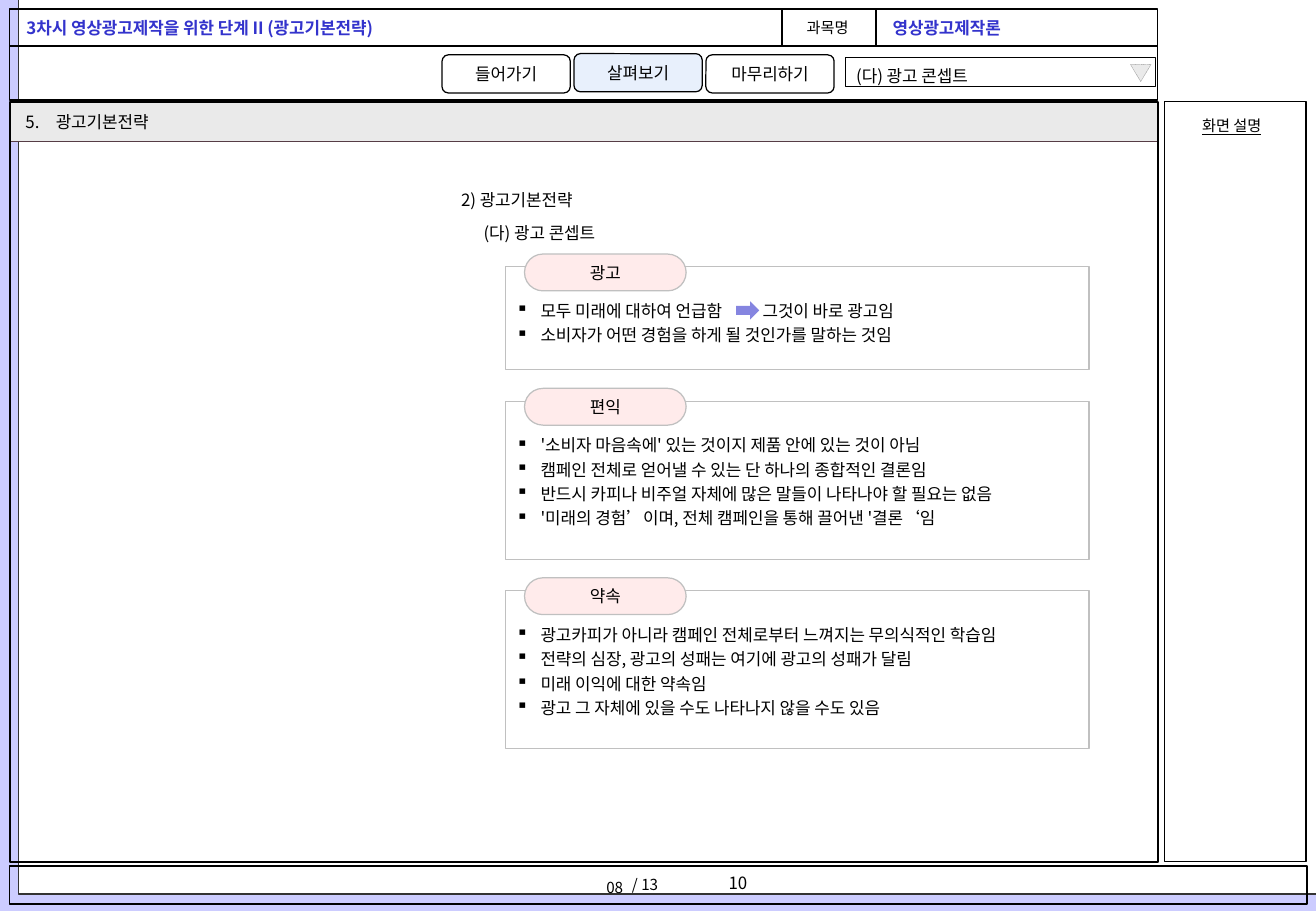
from dataclasses import dataclass

from lxml import etree
from pptx import Presentation
from pptx.dml.color import RGBColor
from pptx.enum.dml import MSO_LINE
from pptx.enum.shapes import MSO_SHAPE
from pptx.enum.text import MSO_ANCHOR, PP_ALIGN
from pptx.oxml.ns import qn
from pptx.util import Pt

RECTANGLE = MSO_SHAPE.RECTANGLE
ROUNDED = MSO_SHAPE.ROUNDED_RECTANGLE
TRIANGLE = MSO_SHAPE.ISOSCELES_TRIANGLE
RIGHT_ARROW = MSO_SHAPE.RIGHT_ARROW
LEFT, CENTER, RIGHT = PP_ALIGN.LEFT, PP_ALIGN.CENTER, PP_ALIGN.RIGHT
TOP, MIDDLE = MSO_ANCHOR.TOP, MSO_ANCHOR.MIDDLE
DOTTED = MSO_LINE.ROUND_DOT


@dataclass(frozen=True)
class Theme:
    font: str = "Noto Sans CJK KR"
    body: float = 10
    small: float = 9
    black: str = "000000"
    white: str = "FFFFFF"
    title: str = "3333CC"
    backdrop: str = "CCCCFF"
    page_edge: str = "333333"
    strip: str = "EAEAEA"
    strip_edge: str = "563C45"
    marker_edge: str = "969696"
    active: str = "E8F0FC"
    card_edge: str = "C0C0C0"
    card_label: str = "FFEBEB"
    arrow: str = "8585E0"


THEME = Theme()
TOPIC = "(다) 광고 콘셉트"
CARD_LEFT, CARD_WIDTH, CARD_GAP = 299.5, 346, 18.6
CARDS = [
    ("광고", ["모두 미래에 대하여 언급함",
            "소비자가 어떤 경험을 하게 될 것인가를 말하는 것임"]),
    ("편익", ["'소비자 마음속에' 있는 것이지 제품 안에 있는 것이 아님",
            "캠페인 전체로 얻어낼 수 있는 단 하나의 종합적인 결론임",
            "반드시 카피나 비주얼 자체에 많은 말들이 나타나야 할 필요는 없음",
            "'미래의 경험’이며, 전체 캠페인을 통해 끌어낸 '결론‘임"]),
    ("약속", ["광고카피가 아니라 캠페인 전체로부터 느껴지는 무의식적인 학습임",
            "전략의 심장, 광고의 성패는 여기에 광고의 성패가 달림",
            "미래 이익에 대한 약속임",
            "광고 그 자체에 있을 수도 나타나지 않을 수도 있음"]),
]


def set_bullet(para, tag, indent, **attributes):
    """Give the paragraph a hanging bullet or number."""
    properties = para._p.get_or_add_pPr()
    properties.set("marL", str(Pt(indent)))
    properties.set("indent", str(-Pt(indent)))
    bullet = etree.SubElement(properties, qn(tag))
    for name, value in attributes.items():
        bullet.set(name, value)


def write(para, text, size=THEME.body, color=THEME.black, bold=False,
          underline=False, align=LEFT, spacing=1.0):
    para.alignment = align
    para.line_spacing = spacing
    span = para.add_run()
    span.text = text
    font = span.font
    font.name, font.size = THEME.font, Pt(size)
    font.bold, font.underline = bold, underline
    font.color.rgb = RGBColor.from_string(color)
    east_asian = etree.SubElement(span._r.get_or_add_rPr(), qn("a:ea"))
    east_asian.set("typeface", THEME.font)


def add_shape(page, kind, left, top, width, height, fill=None, line=None,
              weight=0.75, text=None):
    box = page.shapes.add_shape(kind, Pt(left), Pt(top), Pt(width), Pt(height))
    box.shadow.inherit = False
    if fill:
        box.fill.solid()
        box.fill.fore_color.rgb = RGBColor.from_string(fill)
    else:
        box.fill.background()
    if line:
        box.line.color.rgb = RGBColor.from_string(line)
        box.line.width = Pt(weight)
    else:
        box.line.fill.background()
    if text:
        frame = box.text_frame
        frame.word_wrap = False
        frame.vertical_anchor = MIDDLE
        write(frame.paragraphs[0], text, align=CENTER)
    return box


def add_frame(page, left, top, width, height, weight=1):
    add_shape(page, RECTANGLE, left, top, width, height,
              line=THEME.black, weight=weight)


def add_text(page, text, left, top, width, height, anchor=TOP, wrap=True, **style):
    box = page.shapes.add_textbox(Pt(left), Pt(top), Pt(width), Pt(height))
    frame = box.text_frame
    frame.word_wrap = wrap
    frame.vertical_anchor = anchor
    para = frame.paragraphs[0]
    write(para, text, **style)
    return para


def add_list(page, items, left, top, width, height):
    box = page.shapes.add_textbox(Pt(left), Pt(top), Pt(width), Pt(height))
    frame = box.text_frame
    frame.word_wrap = True
    for index, item in enumerate(items):
        para = frame.add_paragraph() if index else frame.paragraphs[0]
        set_bullet(para, "a:buChar", 14.4, char="▪")
        write(para, item, spacing=1.2)


def add_card(page, name, items, top):
    """Draw one labelled card and return its bottom edge."""
    height = 28.3 + 16.35 * len(items)
    add_shape(page, RECTANGLE, CARD_LEFT, top, CARD_WIDTH, height,
              fill=THEME.white, line=THEME.card_edge)
    label = add_shape(page, ROUNDED, CARD_LEFT + 11.4, top - 7.6, 95.8, 21.8,
                      fill=THEME.card_label, line=THEME.card_edge, text=name)
    label.adjustments[0] = 0.5
    add_list(page, items, CARD_LEFT - 0.6, top + 14.2, 377, height - 17)
    return top + height


def add_header(page):
    add_frame(page, 5.6, 5.2, 680.4, 22.1)
    add_frame(page, 463.7, 5.2, 55.4, 22.1)
    add_frame(page, 5.6, 27.3, 680.4, 32)
    add_text(page, "3차시 영상광고제작을 위한 단계 II (광고기본전략)",
             8.6, 7.2, 357, 19.4, color=THEME.title, bold=True)
    add_text(page, "과목명", 471, 7.2, 42, 18, wrap=False, size=THEME.small)
    add_text(page, "영상광고제작론", 522, 4.3, 163, 22,
             color=THEME.title, bold=True, spacing=1.2)

    for index, name in enumerate(["들어가기", "살펴보기", "마무리하기"]):
        active = name == "살펴보기"
        add_shape(page, ROUNDED, 262 + 78.2 * index, 31.8 if active else 32.5,
                  76, 22.6, fill=THEME.active if active else THEME.white,
                  line=THEME.black, text=name)

    add_shape(page, RECTANGLE, 501, 34, 184, 17.3,
              fill=THEME.white, line=THEME.black, weight=0.25)
    marker = add_shape(page, TRIANGLE, 670, 38.2, 12.2, 10.2,
                       fill=THEME.strip, line=THEME.marker_edge, weight=0.25)
    marker.rotation = 180
    marker.line.dash_style = DOTTED
    add_text(page, TOPIC, 500.4, 32.4, 180, 22.3, anchor=MIDDLE, spacing=1.2)


def add_page_frames(page):
    add_shape(page, RECTANGLE, 0, 0, 780, 540, fill=THEME.backdrop)
    add_shape(page, RECTANGLE, 10.8, -5, 775, 535,
              fill=THEME.white, line=THEME.page_edge)
    add_shape(page, RECTANGLE, 5.8, 60.3, 680.4, 23.5,
              fill=THEME.strip, line=THEME.strip_edge, weight=0.25)
    add_frame(page, 5.8, 60.3, 680.4, 450.5)
    add_frame(page, 690.4, 60.3, 83.8, 450.5, weight=0.75)
    add_frame(page, 5.6, 513.2, 769, 22.5)


def add_footer(page):
    add_text(page, "08", 350.4, 514.8, 28, 20,
             size=THEME.small, align=CENTER, spacing=1.2)
    add_text(page, "/ 13", 365.2, 515.5, 32, 18, wrap=False,
             size=THEME.small, align=RIGHT)
    add_text(page, "10", 424.8, 514, 40, 19.4, wrap=False)


def add_content(page):
    heading = add_text(page, "광고기본전략", 8, 60.5, 399, 21.6, spacing=1.2)
    set_bullet(heading, "a:buAutoNum", 18, type="arabicPeriod", startAt="5")
    add_text(page, "화면 설명", 705.4, 65.5, 55.4, 18, wrap=False,
             size=THEME.small, underline=True)
    add_text(page, "2) 광고기본전략", 266.2, 106.6, 416, 21.6, spacing=1.2)
    add_text(page, TOPIC, 279.5, 126, 400, 21.6, spacing=1.2)

    first_top = top = 158.2
    for name, items in CARDS:
        top = add_card(page, name, items, top) + CARD_GAP
    add_shape(page, RIGHT_ARROW, 436.3, 178.6, 13.7, 10.8, fill=THEME.arrow)
    add_text(page, "그것이 바로 광고임", 444.9, first_top + 14.2, 140, 21.6,
             spacing=1.2)


def main():
    deck = Presentation()
    deck.slide_width, deck.slide_height = Pt(780), Pt(540)
    page = deck.slides.add_slide(deck.slide_layouts[6])
    add_page_frames(page)
    add_header(page)
    add_footer(page)
    add_content(page)
    deck.save("out.pptx")


if __name__ == "__main__":
    main()
